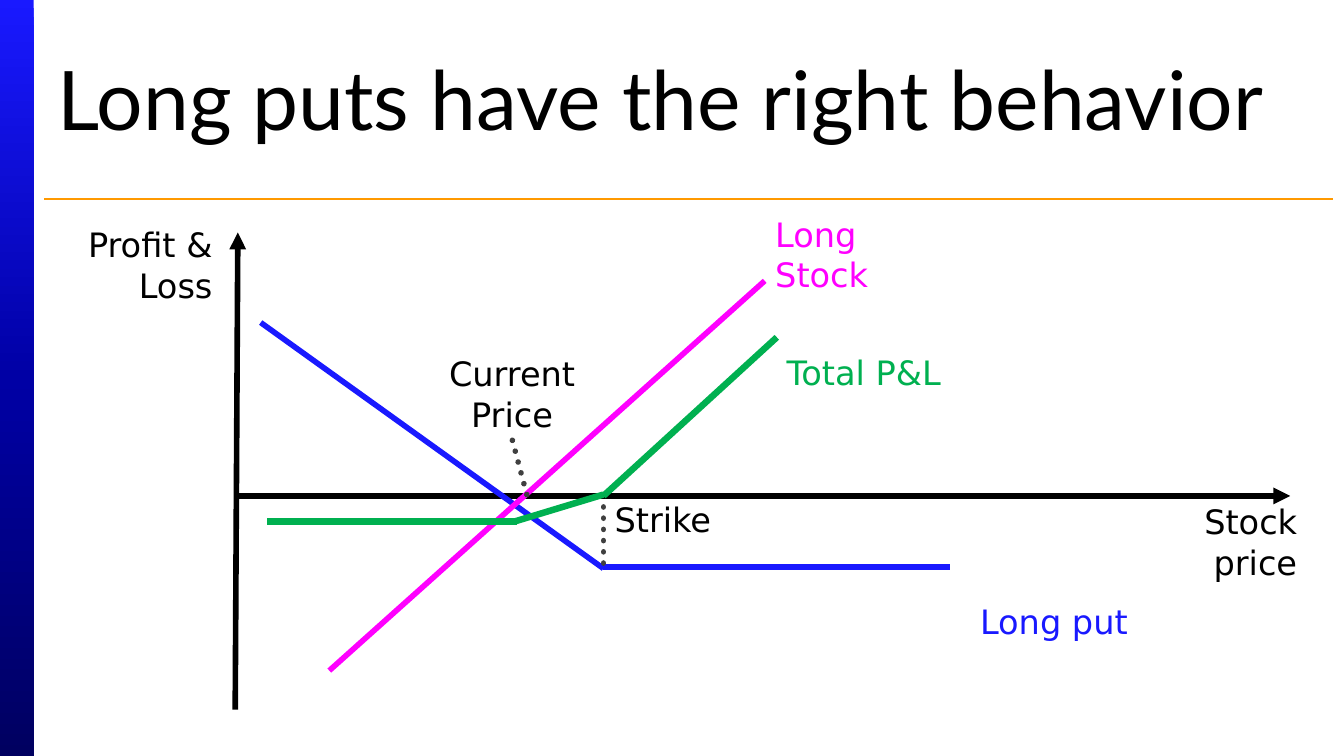
from typing import NamedTuple

from lxml.etree import SubElement
from pptx import Presentation
from pptx.dml.color import RGBColor
from pptx.enum.dml import MSO_LINE
from pptx.enum.shapes import MSO_CONNECTOR, MSO_SHAPE
from pptx.enum.text import MSO_ANCHOR, MSO_AUTO_SIZE, PP_ALIGN
from pptx.oxml.ns import qn
from pptx.util import Inches, Pt

SLIDE_WIDTH = 10
SLIDE_HEIGHT = SLIDE_WIDTH * 9 / 16
BLACK, GRAY, ORANGE = "000000", "404040", "FF9900"
BLUE, MAGENTA, GREEN = "1919FF", "FF00FF", "00B050"
AXIS_Y = 3.69
STRIKE_X = 4.49
FLOOR_Y = 4.22


class Line(NamedTuple):
    start: tuple[float, float]
    end: tuple[float, float]
    color: str
    width: float = 3
    dotted: bool = False
    arrow: bool = False


class Label(NamedTuple):
    text: str
    box: tuple[float, float, float, float]
    color: str = BLACK
    align: PP_ALIGN = PP_ALIGN.RIGHT
    wrap: bool = True


LINES = [
    # Rule under the title
    Line((0.33, 1.48), (9.92, 1.48), ORANGE, width=0.75),
    # Axes, with the arrowhead at the start
    Line((1.77, 1.73), (1.75, 5.28), BLACK, arrow=True),
    Line((9.6, AXIS_Y), (1.77, AXIS_Y), BLACK, arrow=True),
    # Long put
    Line((STRIKE_X, 4.23), (1.94, 2.4), BLUE),
    Line((STRIKE_X, FLOOR_Y), (7.07, FLOOR_Y), BLUE),
    # Long stock
    Line((2.45, 4.99), (5.69, 2.09), MAGENTA),
    # Pointers to current price and strike
    Line((3.92, 3.68), (3.8, 3.23), GRAY, dotted=True),
    Line((STRIKE_X, 4.19), (STRIKE_X, 3.73), GRAY, dotted=True),
    # Total profit and loss
    Line((STRIKE_X, AXIS_Y), (5.78, 2.51), GREEN, width=3.5),
    Line((1.99, 3.88), (3.85, 3.88), GREEN, width=3.5),
    Line((3.83, 3.88), (STRIKE_X, 3.68), GREEN, width=3.5),
]

LABELS = [
    Label("Stock price", (8.67, 3.68, 1.08, 0.71)),
    Label("Long put", (7.17, 4.42, 1.32, 0.4), BLUE, wrap=False),
    Label("Long Stock", (5.67, 1.54, 1.5, 0.71), MAGENTA, PP_ALIGN.LEFT),
    Label("Strike", (4.31, 3.66, 1.08, 0.4)),
    Label("Current Price", (3.1, 2.58, 1.42, 0.71), align=PP_ALIGN.CENTER),
    Label("Profit & Loss", (0.51, 1.62, 1.17, 0.57)),
    Label("Total P&L", (5.46, 2.57, 1.64, 0.4), GREEN),
]


def rgb(color: str) -> RGBColor:
    return RGBColor.from_string(color)


def add_text(slide, text: str, box: tuple[float, float, float, float], *,
             size: float = 18, font: str = "DejaVu Sans", color: str = BLACK,
             align: PP_ALIGN = PP_ALIGN.LEFT, wrap: bool = True,
             anchor: MSO_ANCHOR = MSO_ANCHOR.TOP,
             fit: MSO_AUTO_SIZE = MSO_AUTO_SIZE.SHAPE_TO_FIT_TEXT) -> None:
    shape = slide.shapes.add_textbox(*map(Inches, box))
    frame = shape.text_frame
    frame.word_wrap = wrap
    frame.auto_size = fit
    frame.vertical_anchor = anchor
    paragraph = frame.paragraphs[0]
    paragraph.text = text
    paragraph.alignment = align
    paragraph.font.size = Pt(size)
    paragraph.font.name = font
    paragraph.font.color.rgb = rgb(color)


def add_line(slide, line: Line) -> None:
    connector = slide.shapes.add_connector(
        MSO_CONNECTOR.STRAIGHT, *map(Inches, line.start + line.end))
    connector.line.color.rgb = rgb(line.color)
    connector.line.width = Pt(line.width)
    properties = connector._element.spPr
    outline = properties.find(qn("a:ln"))
    if line.dotted:
        connector.line.dash_style = MSO_LINE.ROUND_DOT
        outline.set("cap", "rnd")
    if line.arrow:
        SubElement(outline, qn("a:headEnd"), type="triangle")
    SubElement(properties, qn("a:effectLst"))


def add_side_band(slide) -> None:
    shape = slide.shapes.add_shape(
        MSO_SHAPE.RECTANGLE, 0, 0, Inches(0.25), Inches(SLIDE_HEIGHT))
    shape.shadow.inherit = False
    shape.line.fill.background()
    shape.fill.gradient()
    shape.fill.gradient_angle = 270
    stops = shape._element.spPr.find(".//" + qn("a:gsLst"))
    stops.clear()
    for percent, color in [(0, BLUE), (50, "0000A5"), (100, "000060")]:
        stop = SubElement(stops, qn("a:gs"), pos=str(percent * 1000))
        SubElement(stop, qn("a:srgbClr"), val=color)


def main() -> None:
    presentation = Presentation()
    presentation.slide_width = Inches(SLIDE_WIDTH)
    presentation.slide_height = Inches(SLIDE_HEIGHT)
    slide = presentation.slides.add_slide(presentation.slide_layouts[6])

    # Frame of the slide
    add_side_band(slide)
    add_text(slide, "Long puts have the right behavior", (0.33, 0.06, 9.58, 1.33),
             size=44, font="Lato", anchor=MSO_ANCHOR.MIDDLE, fit=MSO_AUTO_SIZE.NONE)

    # Payoff diagram
    for line in LINES:
        add_line(slide, line)
    for label in LABELS:
        add_text(slide, label.text, label.box, color=label.color,
                 align=label.align, wrap=label.wrap)

    presentation.save("out.pptx")


if __name__ == "__main__":
    main()
